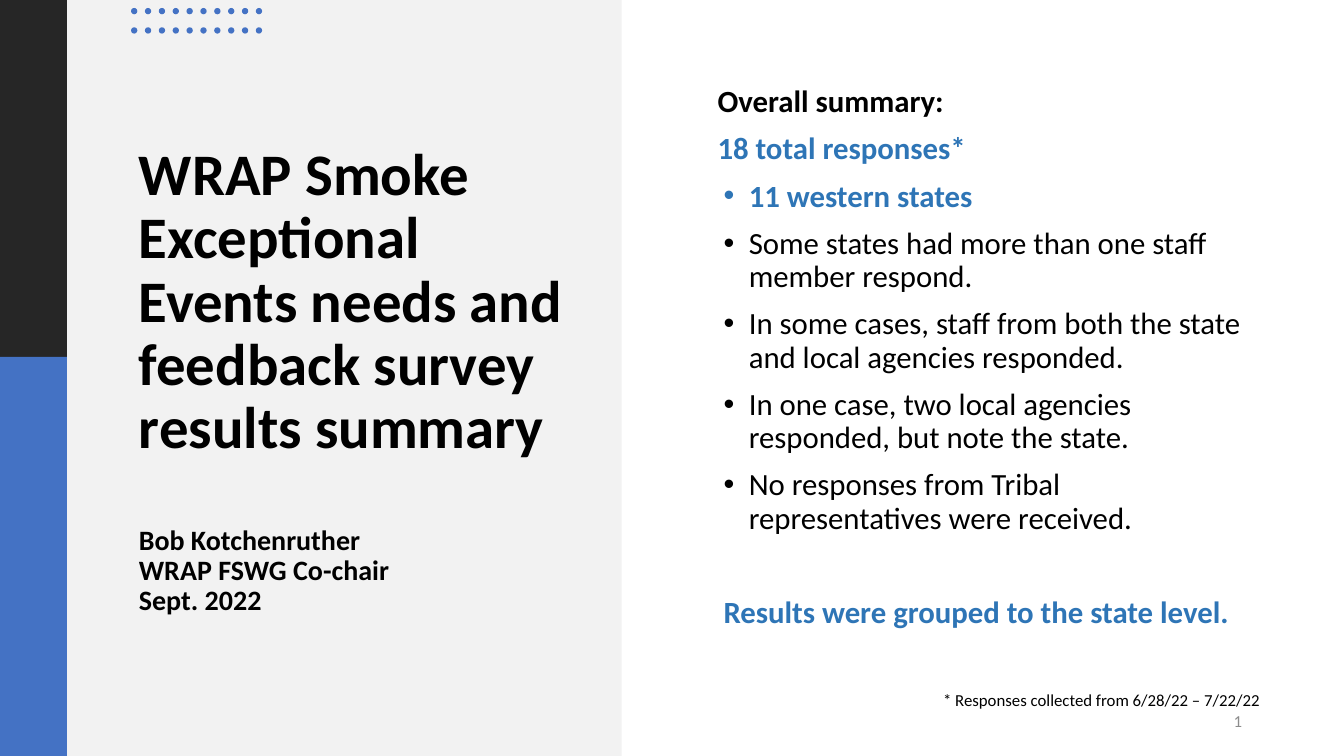
from dataclasses import dataclass

from lxml.etree import SubElement
from pptx import Presentation
from pptx.dml.color import RGBColor
from pptx.enum.shapes import MSO_SHAPE
from pptx.enum.text import MSO_ANCHOR, PP_ALIGN
from pptx.oxml.ns import qn
from pptx.util import Emu, Inches, Pt

COLORS = {
    "charcoal": "262626",
    "blue": "4472C4",
    "panel": "F2F2F2",
    "black": "000000",
    "accent": "2E75B6",
    "grey": "8C8C8C",
}
COLUMNS, ROWS = 32, 18


@dataclass
class Line:
    text: str
    size: int = 22
    bold: bool = False
    color: str = "black"
    bullet: bool = False
    indent: float = 0
    before: float = 0
    spacing: float = 0.9
    align: PP_ALIGN = PP_ALIGN.LEFT


class SlideBuilder:
    font_name = "Calibri"

    def __init__(self, deck):
        self.page = deck.slides.add_slide(deck.slide_layouts[6])
        self.column = deck.slide_width / COLUMNS
        self.row = deck.slide_height / ROWS

    def place(self, left, top, width, height):
        """Turn grid columns and rows into slide lengths."""
        return (Emu(round(left * self.column)), Emu(round(top * self.row)),
                Emu(round(width * self.column)), Emu(round(height * self.row)))

    def shape(self, kind, area, color, parent=None):
        shapes = (parent or self.page).shapes
        shape = shapes.add_shape(kind, *self.place(*area))
        shape.shadow.inherit = False
        shape.fill.solid()
        shape.fill.fore_color.rgb = RGBColor.from_string(COLORS[color])
        shape.line.fill.background()

    def dots(self, left, top, across, down, step_x, step_y, size):
        group = self.page.shapes.add_group_shape()
        for column in range(across):
            for row in range(down):
                area = (left + column * step_x, top + row * step_y, size, size)
                self.shape(MSO_SHAPE.OVAL, area, "blue", group)

    def text(self, area, lines):
        box = self.page.shapes.add_textbox(*self.place(*area))
        frame = box.text_frame
        frame.word_wrap = True
        frame.vertical_anchor = MSO_ANCHOR.MIDDLE
        for index, line in enumerate(lines):
            para = frame.add_paragraph() if index else frame.paragraphs[0]
            self.fill_paragraph(para, line)

    def fill_paragraph(self, para, line):
        para.text = line.text
        para.alignment = line.align
        para.line_spacing = line.spacing
        para.space_before = Pt(line.before)
        para.font.name = self.font_name
        para.font.size = Pt(line.size)
        para.font.bold = line.bold
        para.font.color.rgb = RGBColor.from_string(COLORS[line.color])
        properties = para._p.get_or_add_pPr()
        properties.set("marL", str(Inches(line.indent)))
        if line.bullet:
            properties.set("indent", str(Inches(-0.25)))
            # The bullet has to stand before the default run properties.
            bullet_font = SubElement(properties, qn("a:buFont"), typeface="Arial")
            bullet = SubElement(properties, qn("a:buChar"), char="•")
            defaults = properties.find(qn("a:defRPr"))
            defaults.addprevious(bullet_font)
            defaults.addprevious(bullet)


def bullet_line(text, **style):
    return Line(text, bullet=True, indent=0.31, before=10, **style)


def main():
    deck = Presentation()
    deck.slide_width, deck.slide_height = Inches(13.33), Inches(7.5)
    slide = SlideBuilder(deck)

    slide.shape(MSO_SHAPE.RECTANGLE, (0, 0, 1.6, 8.5), "charcoal")
    slide.shape(MSO_SHAPE.RECTANGLE, (0, 8.5, 1.6, 9.5), "blue")
    slide.shape(MSO_SHAPE.RECTANGLE, (1.6, 0, 13.2, ROWS), "panel")
    slide.dots(3.12, 0.19, across=10, down=2, step_x=0.33, step_y=0.46, size=0.15)

    slide.text((3.07, 2.69, 10.63, 12.74), [
        Line("WRAP Smoke Exceptional Events needs and feedback survey results summary",
             size=42, bold=True),
        Line("Bob Kotchenruther", size=20, bold=True, before=46),
        Line("WRAP FSWG Co-chair", size=20, bold=True),
        Line("Sept. 2022", size=20, bold=True),
    ])
    slide.text((16.85, 1.32, 13.39, 16.32), [
        Line("Overall summary:", bold=True, before=10),
        Line("18 total responses*", bold=True, color="accent", before=10),
        bullet_line("11 western states", bold=True, color="accent"),
        bullet_line("Some states had more than one staff member respond."),
        bullet_line("In some cases, staff from both the state and local agencies responded."),
        bullet_line("In one case, two local agencies responded, but note the state."),
        bullet_line("No responses from Tribal representatives were received."),
        Line("Results were grouped to the state level.", bold=True, color="accent",
             indent=0.06, before=44),
        Line("* Responses collected from 6/28/22 – 7/22/22", size=12, before=44,
             align=PP_ALIGN.RIGHT),
    ])
    slide.text((22.61, 16.68, 7.2, 0.96), [
        Line("1", size=12, color="grey", spacing=1.0, align=PP_ALIGN.RIGHT),
    ])
    deck.save("out.pptx")


if __name__ == "__main__":
    main()
